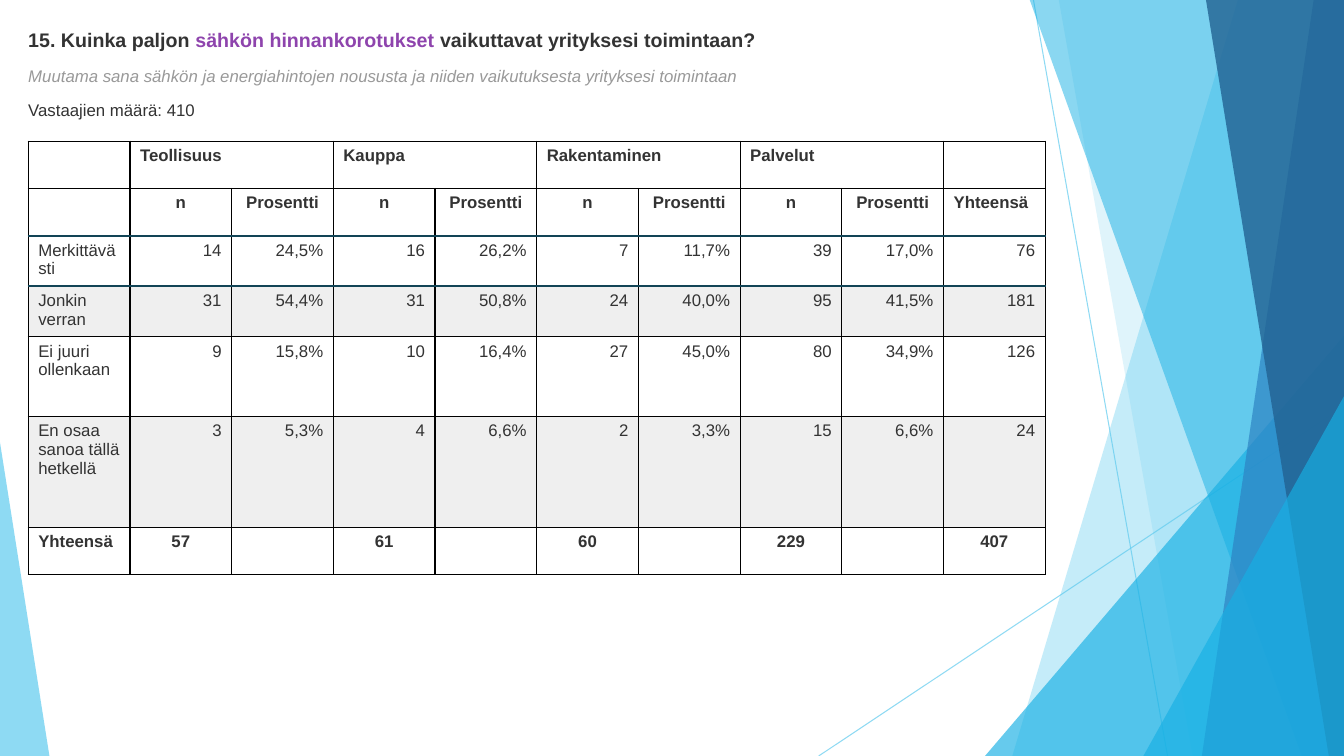
from lxml import etree
from pptx import Presentation
from pptx.dml.color import RGBColor
from pptx.enum import shapes as sh, text as tx
from pptx.oxml.ns import qn
from pptx.util import Inches, Pt

WIDE, HIGH = 13.33, 7.5
INK, TEAL, SKY, BLUE = "333333", "124456", "5FCBEF", "17B0E4"
LEFT, MID, RIGHT = tx.PP_ALIGN.LEFT, tx.PP_ALIGN.CENTER, tx.PP_ALIGN.RIGHT

SECTORS = ["Teollisuus", "Kauppa", "Rakentaminen", "Palvelut"]
ANSWERS = [
    ["Merkittävästi", "14", "24,5%", "16", "26,2%", "7", "11,7%", "39", "17,0%", "76"],
    ["Jonkin verran", "31", "54,4%", "31", "50,8%", "24", "40,0%", "95", "41,5%", "181"],
    ["Ei juuri ollenkaan", "9", "15,8%", "10", "16,4%", "27", "45,0%", "80", "34,9%", "126"],
    ["En osaa sanoa tällä hetkellä", "3", "5,3%", "4", "6,6%", "2", "3,3%", "15", "6,6%", "24"],
]
TOTALS = ["Yhteensä", "57", "", "61", "", "60", "", "229", "", "407"]
HEIGHTS = [0.47, 0.47, 0.5, 0.5, 0.79, 1.1, 0.47]


def color(code):
    return RGBColor.from_string(code)


def fade(shape, alpha):
    """Set the opacity, in percent, of the shape's colours."""
    for tint in list(shape._element.spPr.iter(qn("a:srgbClr"))):
        etree.SubElement(tint, qn("a:alpha"), val=str(alpha * 1000))


def paint(shape, code, alpha):
    shape.shadow.inherit = False
    shape.fill.solid()
    shape.fill.fore_color.rgb = color(code)
    shape.line.fill.background()
    fade(shape, alpha)


def add_line(slide, x1, y1, x2, y2):
    line = slide.shapes.add_connector(
        sh.MSO_CONNECTOR.STRAIGHT, Inches(x1), Inches(y1), Inches(x2), Inches(y2))
    line.line.color.rgb = color(SKY)
    line.line.width = Pt(0.75)
    fade(line, 70)
    etree.SubElement(line._element.spPr, qn("a:effectLst"))


def add_band(slide, top, foot, code, alpha):
    """Fill from a slanted left edge to the right side of the slide."""
    form = slide.shapes.build_freeform(Inches(top), Inches(-0.01))
    form.add_line_segments(
        [(Inches(x), Inches(y)) for x, y in
         [(WIDE, -0.01), (WIDE, HIGH), (foot, HIGH)]], close=True)
    paint(form.convert_to_shape(), code, alpha)


def add_wedge(slide, x, y, width, tip, code, alpha):
    """Stand a triangle on the slide's foot, with its tip at 0 to 1 of its width."""
    wedge = slide.shapes.add_shape(
        sh.MSO_SHAPE.ISOSCELES_TRIANGLE,
        Inches(x), Inches(y), Inches(width), Inches(HIGH - y))
    wedge.adjustments[0] = tip
    paint(wedge, code, alpha)


def add_run(para, words, size=12, code=INK, bold=False, slant=False):
    run = para.add_run()
    run.text = words
    font = run.font
    font.name, font.size = "Arial", Pt(size)
    font.bold, font.italic = bold, slant
    font.color.rgb = color(code)


def add_text(slide, y, height, runs):
    box = slide.shapes.add_textbox(Inches(0.28), Inches(y), Inches(12.78), Inches(height))
    frame = box.text_frame
    frame.word_wrap = True
    frame.auto_size = tx.MSO_AUTO_SIZE.SHAPE_TO_FIT_TEXT
    frame.margin_left = frame.margin_right = frame.margin_top = frame.margin_bottom = 0
    for words, style in runs:
        add_run(frame.paragraphs[0], words, **style)


def add_edge(cell, side, code, width):
    edge = etree.SubElement(cell._tc.get_or_add_tcPr(), qn("a:ln" + side), w=str(Pt(width)))
    fill = etree.SubElement(edge, qn("a:solidFill"))
    etree.SubElement(fill, qn("a:srgbClr"), val=code)


def fill_cell(cell, words, align, bold, shade, teal):
    """Write and style a cell; teal lists the sides with the heavy rule."""
    for side in "LRTB":
        if side in teal:
            add_edge(cell, side, TEAL, 2)
        else:
            add_edge(cell, side, "000000", 1)
    if shade:
        cell.fill.solid()
        cell.fill.fore_color.rgb = color("EFEFEF")
    else:
        cell.fill.background()
    para = cell.text_frame.paragraphs[0]
    para.alignment = align
    if words:
        add_run(para, words, bold=bold)


def add_grid(slide):
    heads = [""] + [part for name in SECTORS for part in (name, "")] + [""]
    units = [""] + ["n", "Prosentti"] * len(SECTORS) + ["Yhteensä"]
    rows = [heads, units, *ANSWERS, TOTALS]
    count = len(heads)
    frame = slide.shapes.add_table(
        len(rows), count, Inches(0.28), Inches(1.4), Inches(10.09), Inches(sum(HEIGHTS)))
    grid = frame.table
    grid.first_row = grid.horz_banding = False
    for col in grid.columns:
        col.width = Inches(10.09 / count)
    rules = {1: "B", 2: "TB", 3: "T"}
    for r, row in enumerate(rows):
        grid.rows[r].height = Inches(HEIGHTS[r])
        body = 2 <= r <= 5
        for c, words in enumerate(row):
            align = RIGHT if body else MID
            if r == 0 or c == 0 or (r == 1 and c == count - 1):
                align = LEFT
            fill_cell(grid.cell(r, c), words, align, not body, r in (3, 5), rules.get(r, ""))
    for c in range(1, count - 1, 2):
        grid.cell(0, c).merge(grid.cell(0, c + 1))


def add_decor(slide):
    add_line(slide, 10.25, 0, 11.58, HIGH)
    add_line(slide, WIDE, 4.03, 8.12, HIGH)
    add_band(slide, 12.28, 10.04, SKY, 36)
    add_band(slide, 10.5, 11.83, SKY, 20)
    add_wedge(slide, 9.77, 3.33, 3.56, 1, BLUE, 66)
    add_band(slide, 10.21, 12.91, BLUE, 50)
    add_band(slide, 13.03, 11.92, "2E83C3", 70)
    add_band(slide, 11.96, 13.18, "226292", 80)
    add_wedge(slide, 11.34, 3.93, 1.99, 1, BLUE, 66)
    add_wedge(slide, 0, 4.39, 0.49, 0, SKY, 70)


def main():
    deck = Presentation()
    deck.slide_width, deck.slide_height = Inches(WIDE), Inches(HIGH)
    slide = deck.slides.add_slide(deck.slide_layouts[6])
    add_decor(slide)
    title = {"size": 14, "bold": True}
    add_text(slide, 0.28, 0.23, [
        ("15. Kuinka paljon ", title),
        ("sähkön hinnankorotukset", {**title, "code": "8E44AD"}),
        (" vaikuttavat yrityksesi toimintaan?", title)])
    add_text(slide, 0.65, 0.2, [
        ("Muutama sana sähkön ja energiahintojen noususta ja niiden vaikutuksesta "
         "yrityksesi toimintaan", {"code": "999999", "slant": True})])
    add_text(slide, 0.99, 0.2, [("Vastaajien määrä: 410", {})])
    add_grid(slide)
    deck.save("out.pptx")


if __name__ == "__main__":
    main()
